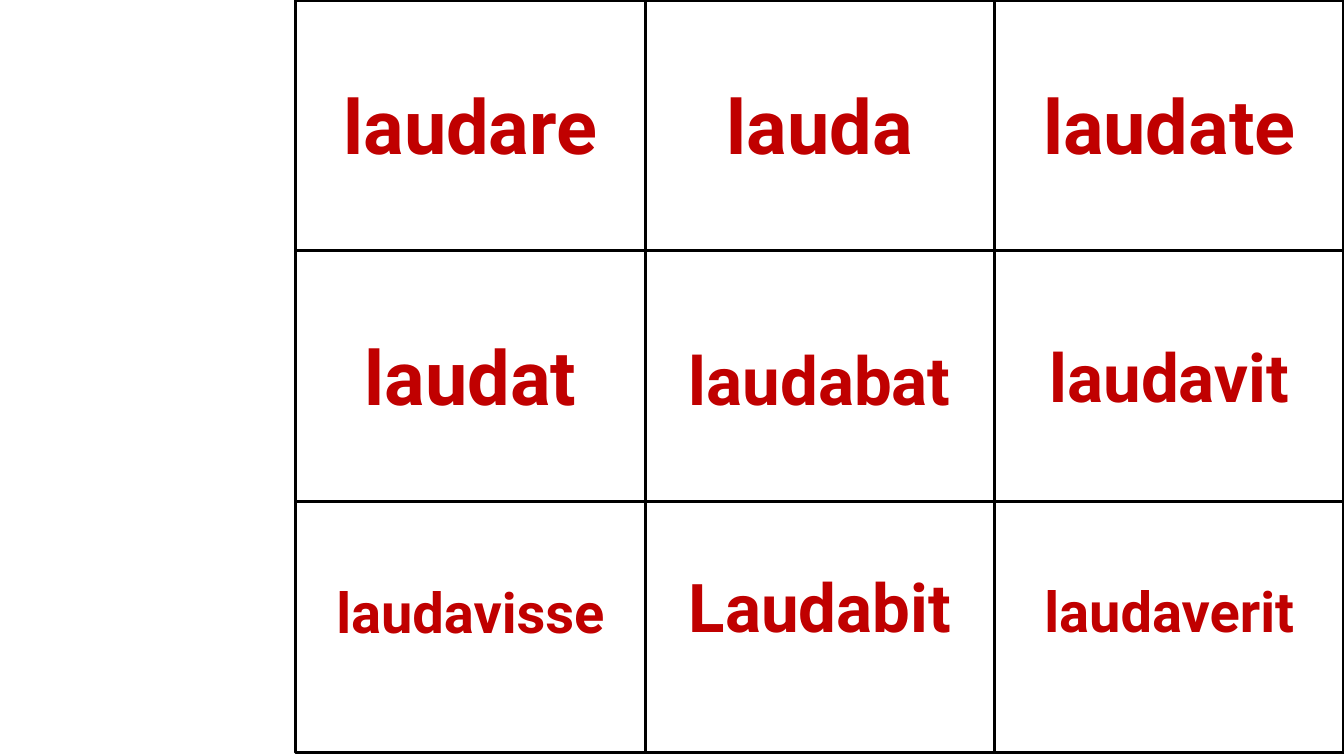
from lxml.etree import SubElement
from pptx import Presentation
from pptx.dml.color import RGBColor
from pptx.enum.shapes import MSO_SHAPE
from pptx.enum.text import MSO_AUTO_SIZE, PP_ALIGN
from pptx.oxml.ns import qn
from pptx.util import Inches, Pt

# Content: word, text size, shift of the word from the middle of its cell
VERB_FORMS = [
    [("laudare", 54, 0), ("lauda", 54, 0), ("laudate", 54, 0)],
    [("laudat", 54, 0), ("laudabat", 48, 0.03), ("laudavit", 48, 0)],
    [("laudavisse", 40, -0.15), ("Laudabit", 48, -0.2), ("laudaverit", 40, -0.16)],
]
RED = RGBColor(0xC0, 0x00, 0x00)
BLACK = RGBColor(0x00, 0x00, 0x00)

# Grid: reaches from the left margin to the right edge of the slide
SLIDE_WIDTH, SLIDE_HEIGHT = 13.33, 7.5
GRID_LEFT = SLIDE_WIDTH * 0.22
CELL_WIDTH = (SLIDE_WIDTH - GRID_LEFT) / 3
CELL_HEIGHT = SLIDE_HEIGHT * 0.995 / 3


def add_cell(slide, left, top):
    shape = slide.shapes.add_shape(
        MSO_SHAPE.RECTANGLE, Inches(left), Inches(top),
        Inches(CELL_WIDTH), Inches(CELL_HEIGHT))
    shape.shadow.inherit = False
    shape.fill.background()
    shape.line.color.rgb = BLACK
    shape.line.width = Pt(2.25)


def add_text(slide, text, *, left, middle, size, color=RED, font="Roboto", outline=1.75):
    height = size * 1.22 / 72 + 0.1
    box = slide.shapes.add_textbox(
        Inches(left), Inches(middle - height / 2), Inches(CELL_WIDTH), Inches(height))
    frame = box.text_frame
    frame.word_wrap = True
    frame.auto_size = MSO_AUTO_SIZE.SHAPE_TO_FIT_TEXT
    paragraph = frame.paragraphs[0]
    paragraph.alignment = PP_ALIGN.CENTER
    run = paragraph.add_run()
    run.text = text
    run.font.name = font
    run.font.size = Pt(size)
    run.font.bold = True
    run.font.color.rgb = color
    # Letter outline in the colour of the text
    properties = run.font._element
    line = SubElement(properties, qn("a:ln"), w=str(Pt(outline)))
    fill = SubElement(line, qn("a:solidFill"))
    SubElement(fill, qn("a:srgbClr"), val=str(color))
    properties.insert(0, line)


def main():
    presentation = Presentation()
    presentation.slide_width = Inches(SLIDE_WIDTH)
    presentation.slide_height = Inches(SLIDE_HEIGHT)
    slide = presentation.slides.add_slide(presentation.slide_layouts[6])

    cells = [
        (GRID_LEFT + column * CELL_WIDTH, row * CELL_HEIGHT, form)
        for row, forms in enumerate(VERB_FORMS)
        for column, form in enumerate(forms)
    ]
    # Frames first, words on top
    for left, top, _ in cells:
        add_cell(slide, left, top)
    for left, top, (word, size, shift) in cells:
        add_text(slide, word, left=left, middle=top + CELL_HEIGHT / 2 + shift, size=size)

    presentation.save("out.pptx")


if __name__ == "__main__":
    main()
